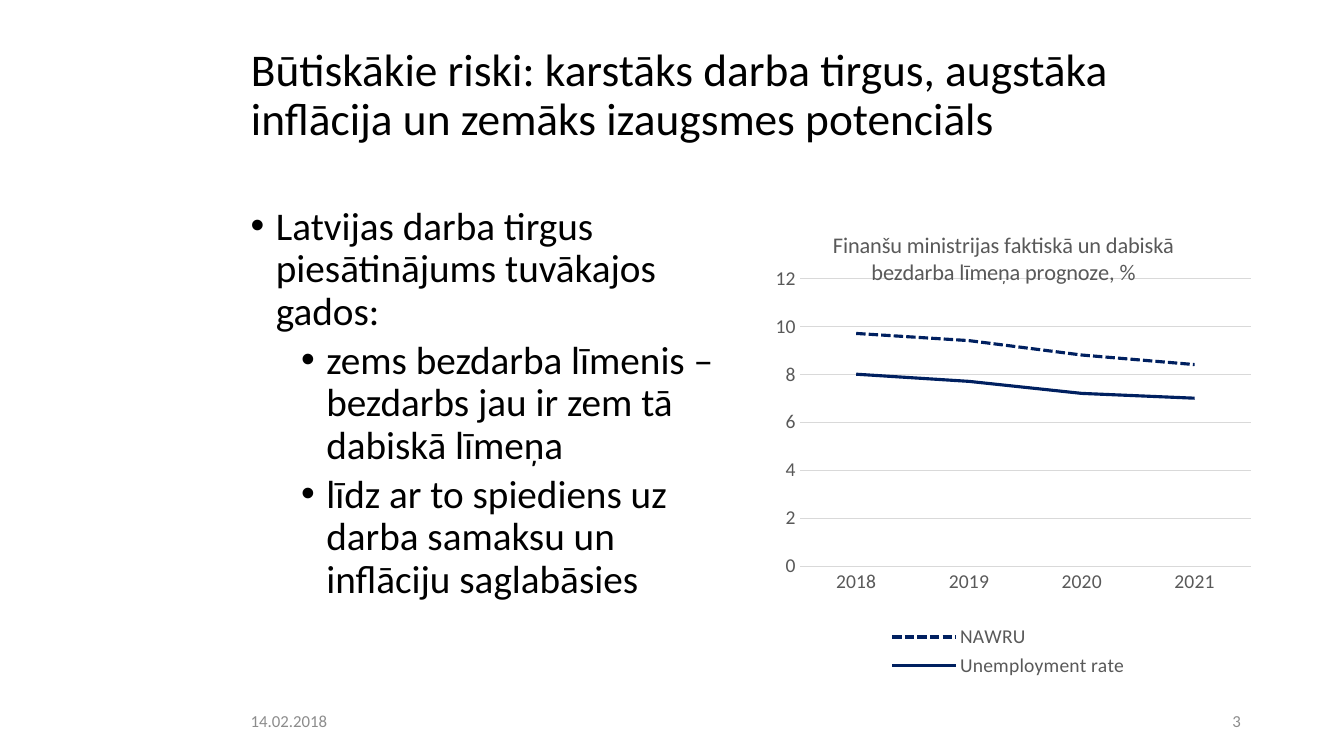
from lxml import etree
from pptx import Presentation
from pptx.chart.data import CategoryChartData
from pptx.dml.color import RGBColor
from pptx.enum.chart import XL_CHART_TYPE as ChartType, XL_LEGEND_POSITION as LegendPosition
from pptx.enum.chart import XL_TICK_MARK as TickMark
from pptx.enum.dml import MSO_LINE as LineDash
from pptx.enum.text import MSO_ANCHOR as Anchor, MSO_AUTO_SIZE as AutoSize, PP_ALIGN as Align
from pptx.oxml import parse_xml
from pptx.oxml.ns import nsdecls, qn
from pptx.util import Cm, Pt

FONT = "Calibri"
COLORS = {"text": "000000", "footer": "8C8C8C", "axis": "595959", "grid": "D9D9D9", "series": "002060"}


def style_font(font, size, color):
    font.name = FONT
    font.size = Pt(size)
    font.bold = False
    font.color.rgb = RGBColor.from_string(COLORS[color])


def manual_layout(target, **fractions):
    """Return a chart layout element with positions as fractions of the chart."""
    layout = parse_xml(f"<c:layout {nsdecls('c')}><c:manualLayout/></c:layout>")
    if target:
        etree.SubElement(layout[0], qn("c:layoutTarget")).set("val", target)
    for mode in ("xMode", "yMode"):
        etree.SubElement(layout[0], qn(f"c:{mode}")).set("val", "edge")
    for name, value in fractions.items():
        etree.SubElement(layout[0], qn(f"c:{name}")).set("val", str(value))
    return layout


presentation = Presentation()
presentation.slide_width = Cm(33.87)
presentation.slide_height = Cm(19.05)
slide = presentation.slides.add_slide(presentation.slide_layouts[5])

# Title
title = slide.shapes.title
title.left, title.top, title.width, title.height = Cm(6.07), Cm(1.02), Cm(25.45), Cm(2.82)
title_frame = title.text_frame
title_frame.auto_size = AutoSize.NONE
title_frame.word_wrap = True
title_frame.vertical_anchor = Anchor.MIDDLE
paragraph = title_frame.paragraphs[0]
paragraph.alignment = Align.LEFT
paragraph.line_spacing = 0.9
run = paragraph.add_run()
run.text = "Būtiskākie riski: karstāks darba tirgus, augstāka inflācija un zemāks izaugsmes potenciāls"
style_font(run.font, 32.4, "text")

# Bulleted argument
BULLETS = [
    (0, "Latvijas darba tirgus piesātinājums tuvākajos gados:"),
    (1, "zems bezdarba līmenis –bezdarbs jau ir zem tā dabiskā līmeņa"),
    (1, "līdz ar to spiediens uz darba samaksu un inflāciju saglabāsies"),
]
body_frame = slide.shapes.add_textbox(Cm(6.07), Cm(5.08), Cm(12.75), Cm(12.09)).text_frame
body_frame.word_wrap = True
for index, (level, text) in enumerate(BULLETS):
    paragraph = body_frame.add_paragraph() if index else body_frame.paragraphs[0]
    paragraph.level = level
    paragraph.line_spacing = 0.9
    if index:
        paragraph.space_before = Pt(5)
    properties = paragraph._p.get_or_add_pPr()
    properties.set("marL", str(Cm(0.635 + 1.27 * level)))
    properties.set("indent", str(-Cm(0.635)))
    etree.SubElement(properties, qn("a:buFont")).set("typeface", "Arial")
    etree.SubElement(properties, qn("a:buChar")).set("char", "•")
    run = paragraph.add_run()
    run.text = text
    style_font(run.font, 28, "text")

# Unemployment chart
chart_data = CategoryChartData(number_format="0.0")
chart_data.categories = ["2018", "2019", "2020", "2021"]
chart_data.add_series("NAWRU", [9.7, 9.4, 8.8, 8.4])
chart_data.add_series("Unemployment rate", [8, 7.7, 7.2, 7])
chart = slide.shapes.add_chart(
    ChartType.LINE, Cm(19.3), Cm(5.08), Cm(12.24), Cm(12.09), chart_data
).chart
style_font(chart.font, 14, "axis")

chart.has_title = True
run = chart.chart_title.text_frame.paragraphs[0].add_run()
run.text = "Finanšu ministrijas faktiskā un dabiskā bezdarba līmeņa prognoze, %"
style_font(run.font, 16, "axis")
title_element = chart.chart_title._element
for old_layout in title_element.findall(qn("c:layout")):
    title_element.remove(old_layout)
title_element.find(qn("c:tx")).addnext(manual_layout(None, x=0.13, y=0.05))
chart.chart_title.include_in_layout = True

plot_area = chart._chartSpace.chart.plotArea
for old_layout in plot_area.findall(qn("c:layout")):
    plot_area.remove(old_layout)
plot_area.insert(0, manual_layout("inner", x=0.08, y=0.16, w=0.93, h=0.6))

chart.has_legend = True
legend = chart.legend
legend.position = LegendPosition.BOTTOM
legend.include_in_layout = False
style_font(legend.font, 14, "axis")
legend._element.find(qn("c:legendPos")).addnext(manual_layout(None, x=0.1, y=0.86, w=0.86, h=0.08))

for axis in (chart.category_axis, chart.value_axis):
    axis.major_tick_mark = axis.minor_tick_mark = TickMark.NONE
    style_font(axis.tick_labels.font, 14, "axis")
value_axis = chart.value_axis
value_axis.minimum_scale, value_axis.maximum_scale, value_axis.major_unit = 0, 12, 2
value_axis.tick_labels.number_format = "0"
value_axis.tick_labels.number_format_is_linked = False
value_axis.format.line.fill.background()
value_axis.has_major_gridlines = True
for line in (chart.category_axis.format.line, value_axis.major_gridlines.format.line):
    line.width = Pt(0.75)
    line.color.rgb = RGBColor.from_string(COLORS["grid"])

plot = chart.plots[0]
plot.vary_by_categories = False
for series, dash in zip(plot.series, (LineDash.SQUARE_DOT, LineDash.SOLID)):
    series.smooth = False
    series.format.line.width = Pt(2.25)
    series.format.line.color.rgb = RGBColor.from_string(COLORS["series"])
    series.format.line.dash_style = dash

# Date and slide number
FOOTERS = [(6.07, 4.17, "14.02.2018", Align.LEFT), (29.51, 2.01, "3", Align.RIGHT)]
for left, width, text, alignment in FOOTERS:
    footer_frame = slide.shapes.add_textbox(Cm(left), Cm(17.65), Cm(width), Cm(1.02)).text_frame
    footer_frame.word_wrap = True
    footer_frame.vertical_anchor = Anchor.MIDDLE
    paragraph = footer_frame.paragraphs[0]
    paragraph.alignment = alignment
    run = paragraph.add_run()
    run.text = text
    style_font(run.font, 12, "footer")

presentation.save("out.pptx")
